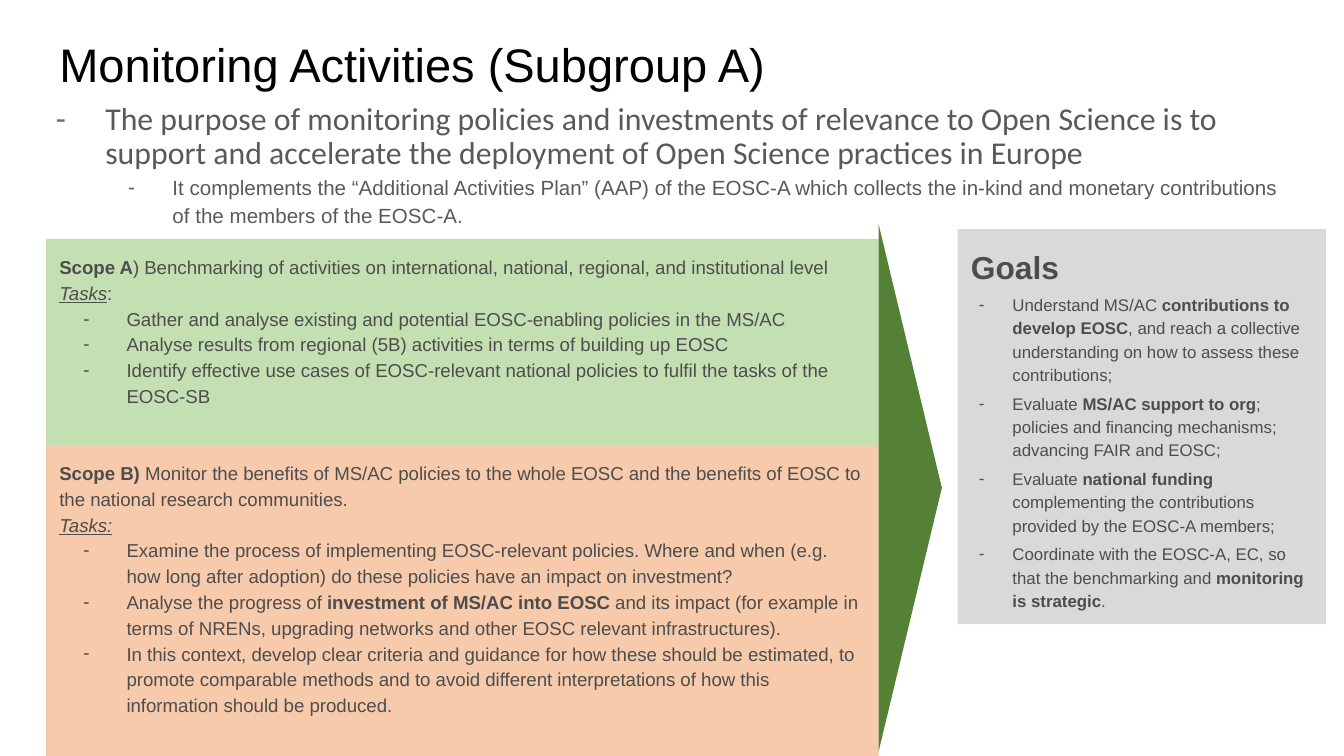
from pptx import Presentation
from pptx.dml.color import RGBColor as RGB
from pptx.enum.shapes import MSO_SHAPE as Shape
from pptx.enum.text import MSO_ANCHOR as Anchor, PP_ALIGN as Align
from pptx.oxml.ns import qn
from pptx.util import Inches, Pt
from lxml.etree import SubElement

COLS, ROWS = 100, 56.25
UNIT = Inches(0.1)

BLACK = RGB(0x00, 0x00, 0x00)
INK = RGB(0x4D, 0x4D, 0x4D)
GREY = RGB(0x59, 0x59, 0x59)
DASH = RGB(0x75, 0x70, 0x70)
GREEN = RGB(0xC4, 0xE0, 0xB2)
PEACH = RGB(0xF7, 0xCA, 0xAC)
SILVER = RGB(0xD9, 0xD9, 0xD9)
FOREST = RGB(0x54, 0x81, 0x35)

LEFT, WIDE = 3.43, 61.95
SPLIT = 33.13

SCOPE_A = (
    "*Scope A*) Benchmarking of activities on international, national, regional, and institutional level",
    "_Tasks_:",
    [
        "Gather and analyse existing and potential EOSC-enabling policies in the MS/AC",
        "Analyse results from regional (5B) activities in terms of building up EOSC",
        "Identify effective use cases of EOSC-relevant national policies to fulfil the tasks of the EOSC-SB",
    ],
)
SCOPE_B = (
    "*Scope B)* Monitor the benefits of MS/AC policies to the whole EOSC and the benefits of EOSC to the national research communities.",
    "_Tasks:_",
    [
        "Examine the process of implementing EOSC-relevant policies. Where and when (e.g. how long after adoption) do these policies have an impact on investment?",
        "Analyse the progress of *investment of MS/AC into EOSC* and its impact (for example in terms of NRENs, upgrading networks and other EOSC relevant infrastructures).",
        "In this context, develop clear criteria and guidance for how these should be estimated, to promote comparable methods and to avoid different interpretations of how this information should be produced.",
    ],
)
GOALS = [
    "Understand MS/AC *contributions to develop EOSC*, and reach a collective understanding on how to assess these contributions;",
    "Evaluate *MS/AC support to org*; policies and financing mechanisms; advancing FAIR and EOSC;",
    "Evaluate *national funding* complementing the contributions provided by the EOSC-A members;",
    "Coordinate with the EOSC-A, EC, so that the benchmarking and *monitoring is strategic*.",
]
PURPOSE = "The purpose of monitoring policies and investments of relevance to Open Science is to support and accelerate the deployment of Open Science practices in Europe"
DETAIL = "It complements the “Additional Activities Plan” (AAP) of the EOSC-A which collects the in-kind and monetary contributions of the members of the EOSC-A."


def grid(*spans):
    return [int(span * UNIT) for span in spans]


def setup(frame):
    frame.word_wrap = True
    frame.vertical_anchor = Anchor.TOP
    frame.margin_left = frame.margin_right = UNIT
    frame.margin_top = frame.margin_bottom = UNIT
    return frame


def label(slide, *spans):
    return setup(slide.shapes.add_textbox(*grid(*spans)).text_frame)


def block(slide, kind, fill, *spans):
    shape = slide.shapes.add_shape(kind, *grid(*spans))
    shape.shadow.inherit = False
    shape.fill.solid()
    shape.fill.fore_color.rgb = fill
    shape.line.fill.background()
    return shape


def panel(slide, fill, *spans):
    return setup(block(slide, Shape.RECTANGLE, fill, *spans).text_frame)


def write(frame, text, size, color=INK, font="Arial", space=1.15, before=0):
    para = frame.paragraphs[0]
    if para.runs:
        para = frame.add_paragraph()
    para.alignment = Align.LEFT
    para.line_spacing = space
    para.space_before = Pt(before)
    para.space_after = Pt(0)
    mark = "_" if "_" in text else "*"
    for i, part in enumerate(text.split(mark)):
        if not part:
            continue
        run = para.add_run()
        run.text = part
        face = run.font
        face.name, face.size = font, Pt(size)
        face.color.rgb = color
        on = i % 2 == 1
        face.bold = on and mark == "*"
        face.italic = face.underline = on and mark == "_"
    return para


def bullet(para, left, hang, color=INK):
    props = para._p.get_or_add_pPr()
    props.set("marL", str(Inches(left)))
    props.set("indent", str(-Inches(hang)))
    tint = SubElement(props, qn("a:buClr"))
    SubElement(tint, qn("a:srgbClr"), val=str(color))
    SubElement(props, qn("a:buFont"), typeface="Arial")
    SubElement(props, qn("a:buChar"), char="-")


def scope(slide, fill, top, end, content):
    lead, head, tasks = content
    frame = panel(slide, fill, LEFT, top, WIDE, end - top)
    write(frame, lead, 10)
    write(frame, head, 10)
    for task in tasks:
        bullet(write(frame, task, 10), 0.5, 0.32)


def goals(slide):
    frame = panel(slide, SILVER, 71.25, 17.05, 27.4, 29.4)
    write(frame, "*Goals*", 17)
    for goal in GOALS:
        para = write(frame, goal, 9, before=3)
        bullet(para, 0.31, 0.25)
    para.space_after = Pt(3)


def arrow(slide):
    long, thick = 39.2, 4.7
    mid_x, mid_y = LEFT + WIDE + thick / 2, 36.3
    shape = block(slide, Shape.ISOSCELES_TRIANGLE, FOREST,
                  mid_x - long / 2, mid_y - thick / 2, long, thick)
    shape.rotation = 90


def intro(slide):
    frame = label(slide, 1.85, 6.65, 95.2, 11.2)
    para = write(frame, PURPOSE, 17, GREY, "Calibri", 0.9, 5)
    bullet(para, 0.5, 0.37, DASH)
    para = write(frame, DETAIL, 11, GREY)
    para.level = 1
    bullet(para, 1, 0.33, GREY)


def main():
    deck = Presentation()
    deck.slide_width, deck.slide_height = grid(COLS, ROWS)
    slide = deck.slides.add_slide(deck.slide_layouts[6])
    title = label(slide, LEFT, 1.55, 93.2, 6.3)
    title.vertical_anchor = Anchor.BOTTOM
    write(title, "Monitoring Activities (Subgroup A)", 25.2, BLACK, space=1)
    scope(slide, GREEN, 17.8, SPLIT, SCOPE_A)
    scope(slide, PEACH, SPLIT, ROWS, SCOPE_B)
    goals(slide)
    arrow(slide)
    intro(slide)
    deck.save("out.pptx")


if __name__ == "__main__":
    main()
